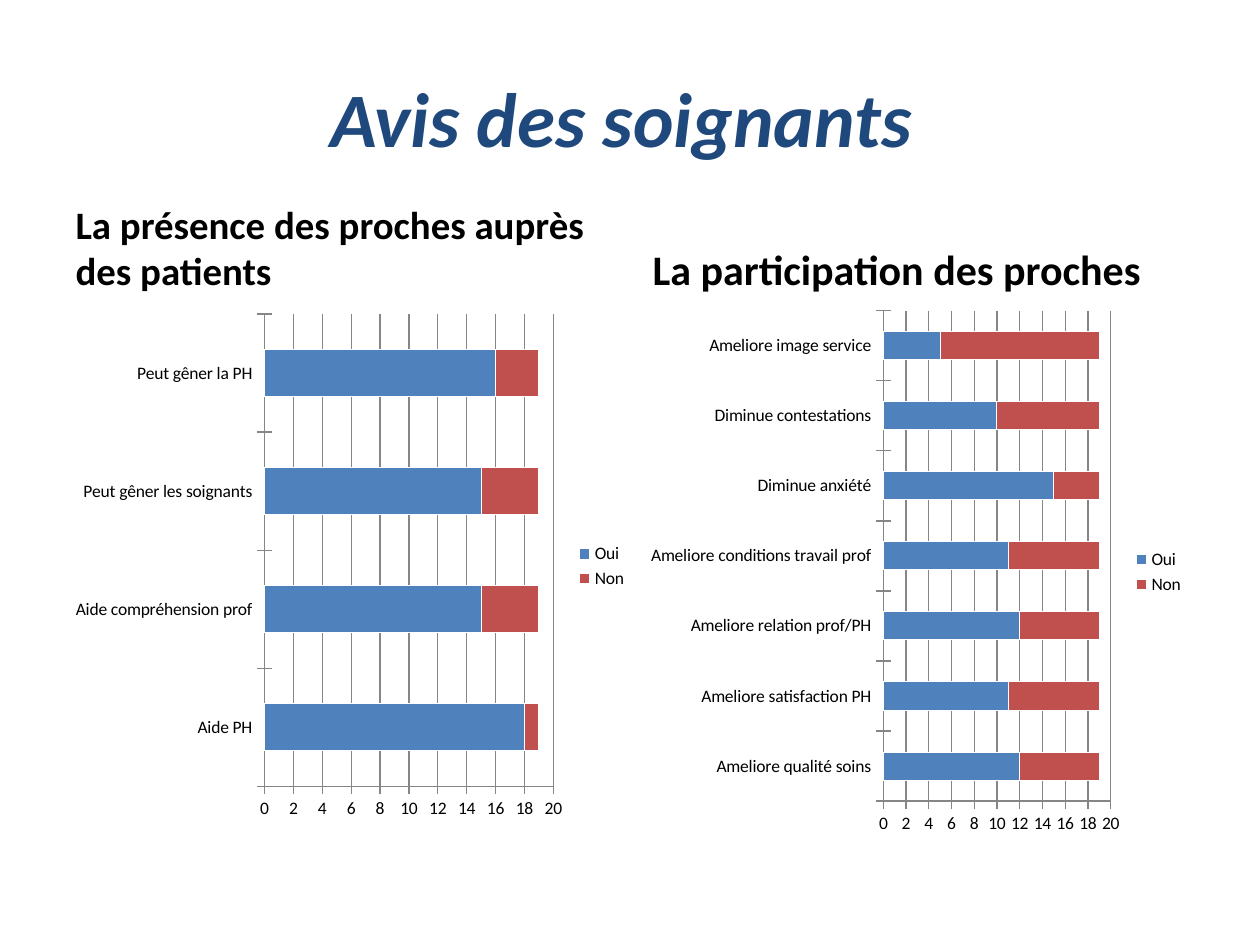
from dataclasses import dataclass

from pptx import Presentation
from pptx.chart.data import CategoryChartData
from pptx.dml.color import RGBColor
from pptx.enum.chart import XL_CHART_TYPE, XL_LEGEND_POSITION, XL_TICK_MARK
from pptx.enum.text import MSO_ANCHOR, MSO_AUTO_SIZE, PP_ALIGN
from pptx.util import Inches, Pt

COLUMNS, ROWS = 100, 75  # grid over the whole slide


@dataclass(frozen=True)
class Theme:
    font: str = "Calibri"
    title: str = "1F497D"
    text: str = "000000"
    grid: str = "868686"
    outline: str = "FFFFFF"
    series: tuple = ("4F81BD", "C0504D")
    title_size: float = 44
    heading_size: float = 24
    long_heading_size: float = 22.2
    chart_size: float = 10


def write_text(shape, text, *, theme, size, color, anchor, align, italic=False):
    frame = shape.text_frame
    frame.text = text
    frame.word_wrap = True
    frame.auto_size = MSO_AUTO_SIZE.NONE
    frame.vertical_anchor = anchor
    paragraph = frame.paragraphs[0]
    paragraph.alignment = align
    font = paragraph.runs[0].font
    font.name, font.size = theme.font, Pt(size)
    font.bold, font.italic = True, italic
    font.color.rgb = RGBColor.from_string(color)


class SlideBuilder:
    def __init__(self, presentation, theme):
        self.theme = theme
        self.column = presentation.slide_width / COLUMNS
        self.row = presentation.slide_height / ROWS
        # Comparison layout: a title and two headings
        self.slide = presentation.slides.add_slide(presentation.slide_layouts[4])

    def box(self, left, top, width, height):
        return (round(left * self.column), round(top * self.row),
                round(width * self.column), round(height * self.row))

    def placeholder(self, index, area):
        shape = self.slide.placeholders[index]
        shape.left, shape.top, shape.width, shape.height = self.box(*area)
        return shape

    def title(self, text, area):
        write_text(self.placeholder(0, area), text, theme=self.theme,
                   size=self.theme.title_size, color=self.theme.title,
                   anchor=MSO_ANCHOR.MIDDLE, align=PP_ALIGN.CENTER, italic=True)

    def heading(self, index, text, area, size):
        write_text(self.placeholder(index, area), text, theme=self.theme,
                   size=size, color=self.theme.text,
                   anchor=MSO_ANCHOR.BOTTOM, align=PP_ALIGN.LEFT)

    def opinion_chart(self, answers, area):
        data = CategoryChartData()
        data.categories = list(answers)
        for name, values in zip(("Oui", "Non"), zip(*answers.values())):
            data.add_series(name, values)
        chart = self.slide.shapes.add_chart(
            XL_CHART_TYPE.BAR_STACKED, *self.box(*area), data).chart
        chart.has_title = False
        chart.font.name = self.theme.font
        chart.font.size = Pt(self.theme.chart_size)
        chart.font.color.rgb = RGBColor.from_string(self.theme.text)

        # Legend
        chart.has_legend = True
        chart.legend.position = XL_LEGEND_POSITION.RIGHT
        chart.legend.include_in_layout = False

        # Axes
        grid_color = RGBColor.from_string(self.theme.grid)
        value_axis = chart.value_axis
        value_axis.minimum_scale, value_axis.maximum_scale = 0, 20
        value_axis.major_unit = 2
        value_axis.has_major_gridlines = True
        value_axis.major_gridlines.format.line.color.rgb = grid_color
        for axis in (chart.category_axis, value_axis):
            axis.major_tick_mark = XL_TICK_MARK.CROSS
            axis.minor_tick_mark = XL_TICK_MARK.NONE
            axis.format.line.color.rgb = grid_color

        # Bars
        plot = chart.plots[0]
        plot.vary_by_categories = False
        plot.gap_width, plot.overlap = 150, 100
        for series, color in zip(plot.series, self.theme.series):
            series.format.fill.solid()
            series.format.fill.fore_color.rgb = RGBColor.from_string(color)
            series.format.line.color.rgb = RGBColor.from_string(self.theme.outline)

    def remove_empty_placeholders(self):
        for shape in list(self.slide.placeholders):
            if not shape.text_frame.text:
                shape.element.getparent().remove(shape.element)


# Answers of the carers: (Oui, Non)
PARTICIPATION = {
    "Ameliore qualité soins": (12, 7),
    "Ameliore satisfaction PH": (11, 8),
    "Ameliore relation prof/PH": (12, 7),
    "Ameliore conditions travail prof": (11, 8),
    "Diminue anxiété": (15, 4),
    "Diminue contestations": (10, 9),
    "Ameliore image service": (5, 14),
}
PRESENCE = {
    "Aide PH": (18, 1),
    "Aide compréhension prof": (15, 4),
    "Peut gêner les soignants": (15, 4),
    "Peut gêner la PH": (16, 3),
}


def main():
    presentation = Presentation()
    presentation.slide_width, presentation.slide_height = Inches(10), Inches(7.5)
    theme = Theme()
    builder = SlideBuilder(presentation, theme)
    margin, half = 5, 44.2
    right = COLUMNS - margin - half

    # Title and headings
    builder.title("Avis des soignants ", (margin, 3, COLUMNS - 2 * margin, 12.5))
    builder.heading(1, "La présence des proches auprès des patients",
                    (margin, 16.8, half, 7), theme.long_heading_size)
    builder.heading(3, "La participation des proches",
                    (right, 16.8, half, 7), theme.heading_size)
    builder.remove_empty_placeholders()

    # Charts
    builder.opinion_chart(PARTICIPATION, (right, 23.8, half, 43.2))
    builder.opinion_chart(PRESENCE, (5.1, 24.1, 45.7, 41.7))

    presentation.save("out.pptx")


if __name__ == "__main__":
    main()
